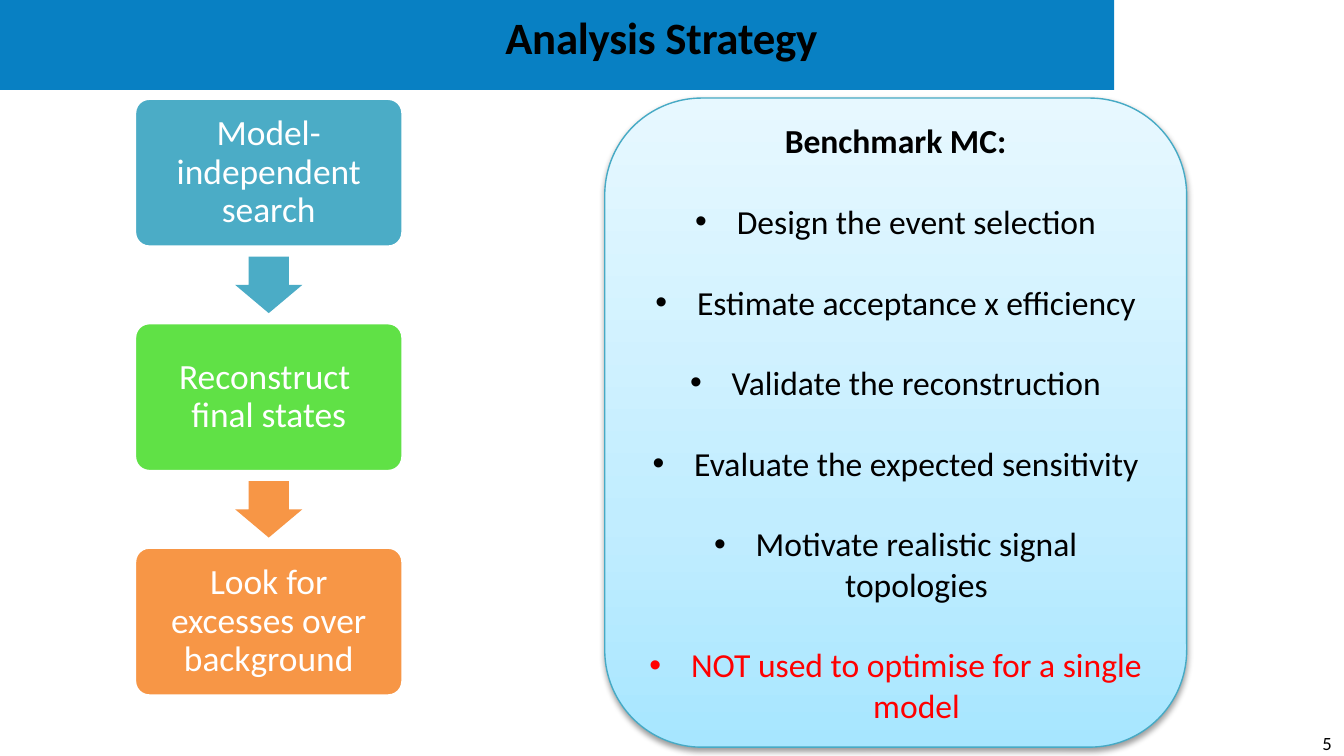
from copy import deepcopy

from lxml.etree import SubElement
from pptx import Presentation
from pptx.dml.color import RGBColor
from pptx.enum.shapes import MSO_SHAPE
from pptx.enum.text import MSO_ANCHOR, PP_ALIGN
from pptx.oxml.ns import qn
from pptx.util import Inches, Pt

TITLE = "Analysis Strategy"
PAGE_NUMBER = "5"
STEPS = [
    ("Model-independent search", "4BACC6"),
    ("Reconstruct \vfinal states", "60E146"),
    ("Look for excesses over background", "F79646"),
]
ARROW_COLORS = ["4BACC6", "F79646"]
PANEL_HEADING = "Benchmark MC:"
PANEL_ITEMS = [
    ("Design the event selection", "text"),
    ("Estimate acceptance x efficiency", "text"),
    ("Validate the reconstruction", "text"),
    ("Evaluate the expected sensitivity", "text"),
    ("Motivate realistic signal topologies", "text"),
    ("NOT used to optimise for a single model", "warning"),
]

THEME = {
    "font": "Calibri",
    "banner": "0880C3",
    "text": "000000",
    "light": "FFFFFF",
    "warning": "FF0000",
    "panel_line": "46AAC5",
    "panel_stops": [(0, "A7E6FF"), (0.35, "C1EDFF"), (1, "E7F8FF")],
    "title_size": 24,
    "step_size": 19,
    "panel_size": 18,
    "page_size": 10,
}

SLIDE_W = Inches(10)
SLIDE_H = SLIDE_W * 9 // 16
STEP_LEFT, STEP_TOP, STEP_W, STEP_H, STEP_PITCH = 1, 0.73, 2, 1.11, 1.67
ARROW_W, ARROW_H = 0.5, 0.42


def rgb(color):
    return RGBColor.from_string(color)


def style(p, size, color, bold=False, spacing=None):
    for r in p.runs:
        r.font.name = THEME["font"]
        r.font.size = Pt(size)
        r.font.bold = bold
        r.font.color.rgb = rgb(color)
        if spacing is not None:
            r.font._element.set("spc", str(int(spacing * 100)))


def set_insets(tf, inset):
    tf.margin_left = tf.margin_top = tf.margin_right = tf.margin_bottom = Inches(inset)


def add_shape(s, kind, left, top, width, height, fill=None, line=None, line_width=1):
    sp = s.shapes.add_shape(kind, Inches(left), Inches(top), Inches(width), Inches(height))
    sp.shadow.inherit = False
    if fill:
        sp.fill.solid()
        sp.fill.fore_color.rgb = rgb(fill)
    if line:
        sp.line.color.rgb = rgb(line)
        sp.line.width = Pt(line_width)
    else:
        sp.line.fill.background()
    return sp


def add_label(s, text, left, top, width, height, size, **font):
    box = s.shapes.add_textbox(Inches(left), Inches(top), Inches(width), Inches(height))
    tf = box.text_frame
    set_insets(tf, 0)
    tf.text = text
    style(tf.paragraphs[0], size, THEME["text"], **font)
    return tf.paragraphs[0]


def add_flow(s):
    for i, (text, color) in enumerate(STEPS):
        top = STEP_TOP + i * STEP_PITCH
        sp = add_shape(s, MSO_SHAPE.ROUNDED_RECTANGLE, STEP_LEFT, top, STEP_W, STEP_H,
                       color, THEME["light"], 2)
        sp.adjustments[0] = 0.1
        tf = sp.text_frame
        tf.word_wrap = True
        tf.vertical_anchor = MSO_ANCHOR.MIDDLE
        set_insets(tf, 0.11)
        p = tf.paragraphs[0]
        p.text = text
        p.alignment = PP_ALIGN.CENTER
        p.line_spacing = 0.9
        style(p, THEME["step_size"], THEME["light"])

    gap = STEP_PITCH - STEP_H
    for i, color in enumerate(ARROW_COLORS):
        top = STEP_TOP + i * STEP_PITCH + STEP_H + (gap - ARROW_H) / 2
        left = STEP_LEFT + (STEP_W - ARROW_W) / 2
        arrow = add_shape(s, MSO_SHAPE.DOWN_ARROW, left, top, ARROW_W, ARROW_H, color)
        arrow.adjustments[0] = 0.6
        arrow.adjustments[1] = 0.5


def fill_gradient(sp, stops):
    """Fill from bottom to top through the given (position, colour) stops."""
    sp.fill.gradient()
    sp.fill.gradient_angle = 90
    gs_list = sp._element.spPr.find(".//" + qn("a:gsLst"))
    while len(gs_list) < len(stops):
        gs_list.append(deepcopy(gs_list[0]))
    for stop, (position, color) in zip(sp.fill.gradient_stops, stops):
        stop.position = position
        stop.color.rgb = rgb(color)


def add_soft_shadow(sp):
    effects = sp._element.spPr.find(qn("a:effectLst"))
    shadow = SubElement(effects, qn("a:outerShdw"), blurRad="40000", dist="20000",
                        dir="5400000", rotWithShape="0")
    color = SubElement(shadow, qn("a:srgbClr"), val="000000")
    SubElement(color, qn("a:alpha"), val="38000")


def add_bullet(p, indent):
    pPr = p._p.get_or_add_pPr()
    pPr.set("marL", str(Inches(indent)))
    pPr.set("indent", str(-Inches(indent)))
    SubElement(pPr, qn("a:buFont"), typeface="Arial")
    SubElement(pPr, qn("a:buChar"), char="•")


def add_panel(s):
    sp = add_shape(s, MSO_SHAPE.ROUNDED_RECTANGLE, 4.5, 0.73, 4.33, 4.83,
                   line=THEME["panel_line"], line_width=0.75)
    fill_gradient(sp, THEME["panel_stops"])
    add_soft_shadow(sp)
    tf = sp.text_frame
    tf.word_wrap = True
    tf.vertical_anchor = MSO_ANCHOR.MIDDLE
    tf.text = PANEL_HEADING
    tf.paragraphs[0].alignment = PP_ALIGN.CENTER
    style(tf.paragraphs[0], THEME["panel_size"], THEME["text"], bold=True)
    for text, color in PANEL_ITEMS:
        p = tf.add_paragraph()
        p.text = text
        p.alignment = PP_ALIGN.CENTER
        p.space_before = Pt(21.6)
        add_bullet(p, 0.31)
        style(p, THEME["panel_size"], THEME[color])


def main():
    prs = Presentation()
    prs.slide_width, prs.slide_height = SLIDE_W, SLIDE_H
    s = prs.slides.add_slide(prs.slide_layouts[6])
    add_shape(s, MSO_SHAPE.RECTANGLE, 0, 0, 8.29, 0.67, THEME["banner"])
    add_label(s, TITLE, 3.76, 0.07, 3.04, 0.43, THEME["title_size"], bold=True, spacing=-0.1)
    add_flow(s)
    add_panel(s)
    number = add_label(s, PAGE_NUMBER, 9.84, 5.47, 0.13, 0.17, THEME["page_size"], spacing=-0.5)
    number.line_spacing = Pt(10.5)
    prs.save("out.pptx")


if __name__ == "__main__":
    main()
